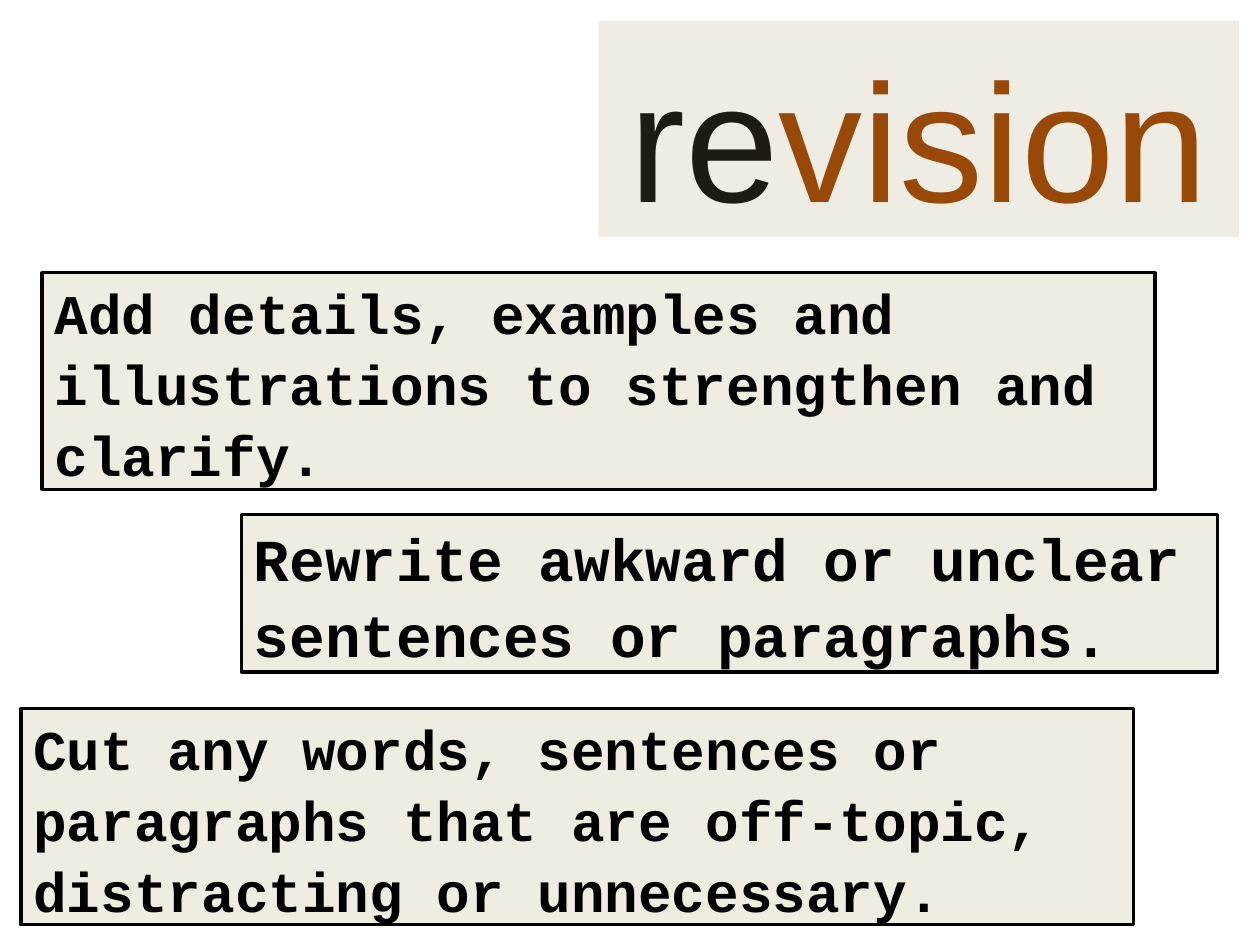
from dataclasses import dataclass

from lxml import etree
from pptx import Presentation
from pptx.dml.color import RGBColor
from pptx.enum.shapes import MSO_SHAPE
from pptx.enum.text import MSO_ANCHOR, PP_ALIGN
from pptx.oxml.ns import qn
from pptx.util import Inches, Pt

RECT = MSO_SHAPE.RECTANGLE
MID = MSO_ANCHOR.MIDDLE
LEFT, CENTER = PP_ALIGN.LEFT, PP_ALIGN.CENTER
CREAM = RGBColor(0xEE, 0xEC, 0xE1)
BLACK = RGBColor(0, 0, 0)
DARK = RGBColor(0x1E, 0x1C, 0x11)
RUST = RGBColor(0x98, 0x48, 0x07)
WIDE, HIGH = Inches(10), Inches(7.5)
COLS, ROWS = 120, 90
TALL = 20.6


@dataclass
class Panel:
    """A filled box, placed in grid columns and rows, with coloured text runs."""
    col: float
    row: float
    cols: float
    rows: float
    runs: list[tuple[str, RGBColor]]
    font: dict
    alpha: int = 94
    edge: bool = True
    align: PP_ALIGN = LEFT


def note(size: int) -> dict:
    """Give the font values of a tip."""
    return {"name": "Courier New", "size": Pt(size), "bold": True}


PANELS = [
    Panel(57, 2, 61, TALL, [("re", DARK), ("vision", RUST)],
          {"name": "Arial", "size": Pt(96)}, 91, False, CENTER),
    Panel(4, 26, 106, TALL,
          [("Add details, examples and illustrations to strengthen and clarify.", BLACK)],
          note(32)),
    Panel(23, 49, 93, 15,
          [("Rewrite awkward or unclear sentences or paragraphs.", BLACK)],
          note(34)),
    Panel(2, 67.5, 106, TALL,
          [("Cut any words, sentences or paragraphs that are off-topic, "
            "distracting or unnecessary.", BLACK)],
          note(32)),
]


def draw(slide, panel: Panel) -> None:
    """Draw one panel with its fill, edge and text."""
    unit_x, unit_y = WIDE / COLS, HIGH / ROWS
    box = slide.shapes.add_shape(
        RECT, round(panel.col * unit_x), round(panel.row * unit_y),
        round(panel.cols * unit_x), round(panel.rows * unit_y))
    box.shadow.inherit = False
    box.fill.solid()
    box.fill.fore_color.rgb = CREAM
    tint = box.fill._xPr.find(qn("a:solidFill"))[0]
    etree.SubElement(tint, qn("a:alpha"), val=str(panel.alpha * 1000))
    if panel.edge:
        box.line.color.rgb = BLACK
        box.line.width = Pt(1.75)
    else:
        box.line.fill.background()
    frame = box.text_frame
    frame.word_wrap = True
    frame.vertical_anchor = MID
    para = frame.paragraphs[0]
    para.alignment = panel.align
    para.line_spacing = 1.06
    for text, color in panel.runs:
        run = para.add_run()
        run.text = text
        run.font.color.rgb = color
        for key, value in panel.font.items():
            setattr(run.font, key, value)


def main() -> None:
    """Build the slide and save it."""
    deck = Presentation()
    deck.slide_width, deck.slide_height = WIDE, HIGH
    slide = deck.slides.add_slide(deck.slide_layouts[6])
    for panel in PANELS:
        draw(slide, panel)
    deck.save("out.pptx")


if __name__ == "__main__":
    main()
